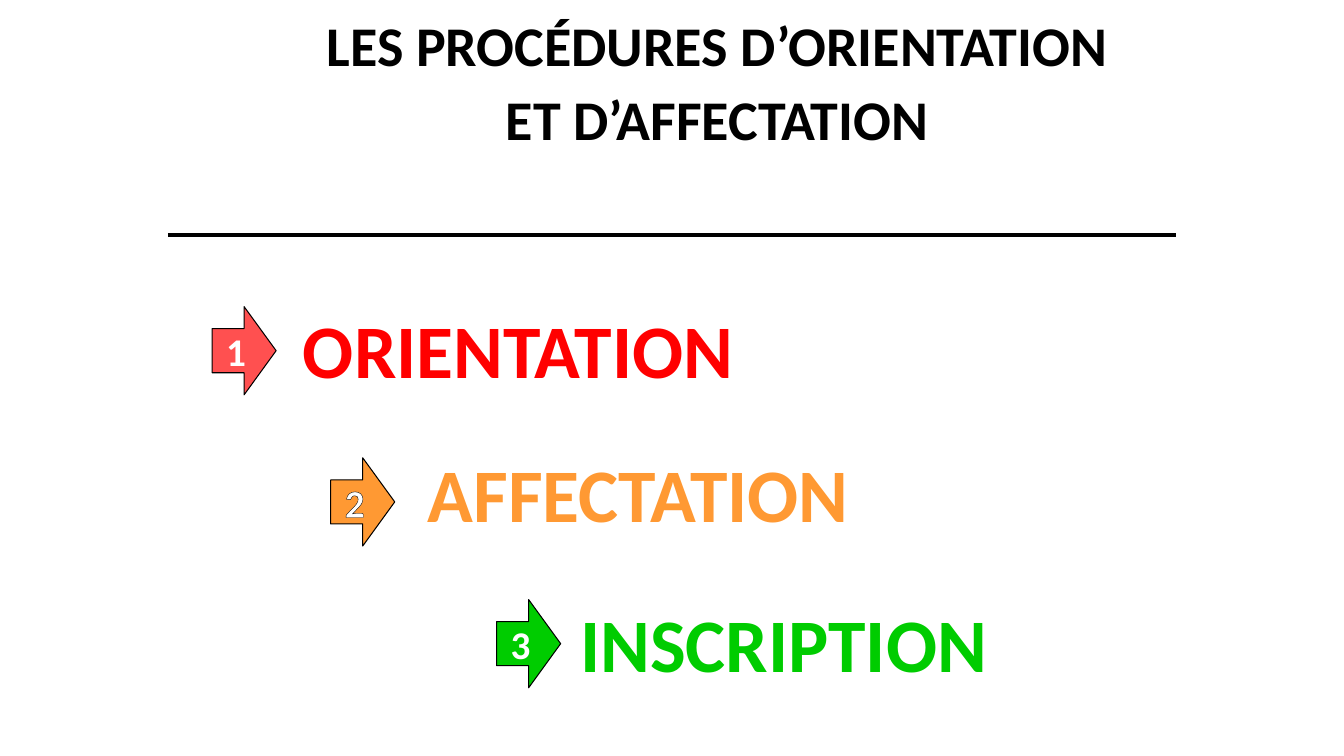
from dataclasses import dataclass

from lxml import etree
from pptx import Presentation
from pptx.dml.color import RGBColor
from pptx.enum.shapes import MSO_CONNECTOR, MSO_SHAPE
from pptx.enum.text import MSO_ANCHOR, MSO_AUTO_SIZE, PP_ALIGN
from pptx.oxml.ns import qn
from pptx.util import Emu, Pt

STRAIGHT = MSO_CONNECTOR.STRAIGHT
RIGHT_ARROW = MSO_SHAPE.RIGHT_ARROW
TOP, MIDDLE = MSO_ANCHOR.TOP, MSO_ANCHOR.MIDDLE
NO_FIT, GROW = MSO_AUTO_SIZE.NONE, MSO_AUTO_SIZE.SHAPE_TO_FIT_TEXT
CENTER = PP_ALIGN.CENTER
TITLE_ONLY = 5
EMU_PER_PX = 9525


@dataclass(frozen=True)
class Theme:
    font: str = "Calibri"
    black: str = "000000"
    white: str = "FFFFFF"
    red: str = "FF0000"
    coral: str = "FF5050"
    orange: str = "FF9933"
    green: str = "00CC00"
    title_size: int = 40
    step_size: int = 54
    number_size: int = 28


THEME = Theme()


def px(n):
    return Emu(n * EMU_PER_PX)


def rgb(color):
    return RGBColor.from_string(color)


def write(tf, text, size, color, anchor=TOP, wrap=True, fit=NO_FIT,
          spacing=None, before=None, outline=None):
    """Write bold, centred text, one paragraph per line."""
    tf.word_wrap, tf.auto_size, tf.vertical_anchor = wrap, fit, anchor
    for i, line in enumerate(text.split("\n")):
        p = tf.paragraphs[0] if i == 0 else tf.add_paragraph()
        p.alignment = CENTER
        if spacing:
            p.line_spacing = spacing
        if before:
            p.space_before = Pt(before)
        r = p.add_run()
        r.text = line
        r.font.name, r.font.size, r.font.bold = THEME.font, Pt(size), True
        r.font.color.rgb = rgb(color)
        if outline:
            ln = etree.Element(qn("a:ln"), w=str(Pt(0.75)))
            fill = etree.SubElement(ln, qn("a:solidFill"))
            etree.SubElement(fill, qn("a:srgbClr"), val=outline)
            r.font._element.insert(0, ln)


def add_header(s, x, y, w, h):
    # Title
    title = s.shapes.title
    title.left, title.top, title.width, title.height = map(px, (x, y, w, h))
    write(title.text_frame, "LES PROCÉDURES D’ORIENTATION\nET D’AFFECTATION",
          THEME.title_size, THEME.black, spacing=0.9, before=10)

    # Rule under the title
    rule_y = px(y + h + 46)
    rule = s.shapes.add_connector(STRAIGHT, px(x), rule_y, px(x + 960), rule_y)
    rule.line.color.rgb = rgb(THEME.black)
    rule.line.width = Pt(3)
    etree.SubElement(rule._element.spPr, qn("a:effectLst"))


def add_step(s, x, y, number, name, fill, color, label_box, outline=None):
    # Numbered arrow
    arrow = s.shapes.add_shape(RIGHT_ARROW, px(x), px(y), px(61), px(84))
    arrow.shadow.inherit = False
    arrow.fill.solid()
    arrow.fill.fore_color.rgb = rgb(fill)
    arrow.line.color.rgb = rgb(THEME.black)
    arrow.line.width = Pt(0.75)
    write(arrow.text_frame, str(number), THEME.number_size, THEME.white,
          anchor=MIDDLE, outline=outline)

    # Step name, placed relative to the arrow
    dx, dy, w = label_box
    label = s.shapes.add_textbox(px(x + dx), px(y + dy), px(w), px(97))
    write(label.text_frame, name, THEME.step_size, color, wrap=False, fit=GROW)


def main():
    prs = Presentation()
    prs.slide_width, prs.slide_height = px(1280), px(720)
    s = prs.slides.add_slide(prs.slide_layouts[TITLE_ONLY])

    add_header(s, 160, 12, 1046, 166)

    t = THEME
    add_step(s, 202, 292, 1, "ORIENTATION", t.coral, t.red, (75, -8, 433))
    add_step(s, 315, 436, 2, "AFFECTATION", t.orange, t.orange,
             (81, -15, 424), outline=t.black)
    add_step(s, 473, 571, 3, "INSCRIPTION", t.green, t.green, (68, -7, 411))

    prs.save("out.pptx")


if __name__ == "__main__":
    main()
